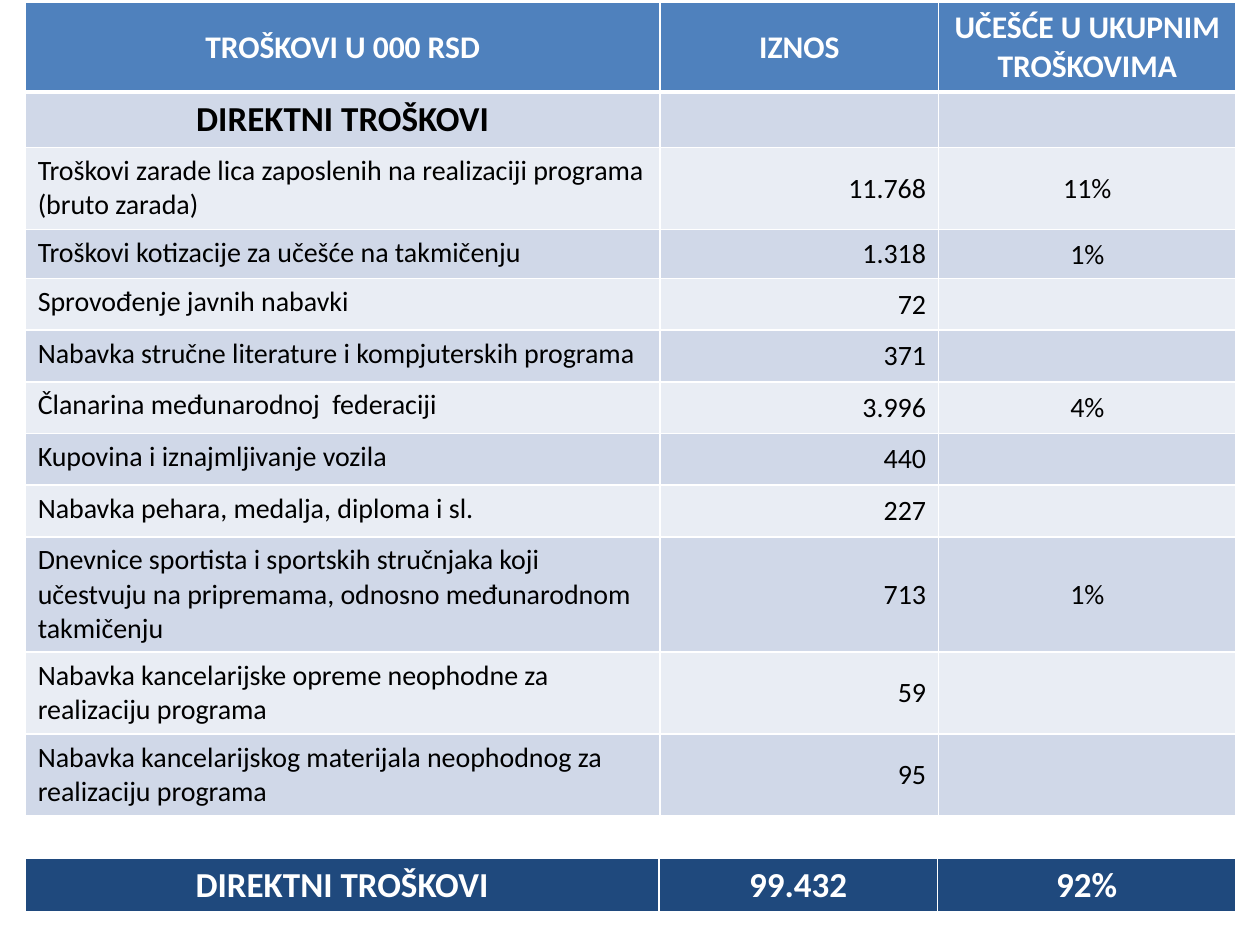
from lxml.etree import SubElement
from pptx import Presentation
from pptx.dml.color import RGBColor
from pptx.enum.text import MSO_ANCHOR, PP_ALIGN
from pptx.oxml.ns import qn
from pptx.util import Inches, Pt

COLORS = {
    "white": "FFFFFF",
    "black": "000000",
    "header": "4F81BD",
    "odd": "D0D8E8",
    "even": "E9EDF4",
    "total": "1F497D",
}
FONT = "Calibri"
HEADINGS = ["TROŠKOVI U 000 RSD", "IZNOS", "UČEŠĆE U UKUPNIM TROŠKOVIMA"]
SECTION = "DIREKTNI TROŠKOVI"
COSTS = [
    ("Troškovi zarade lica zaposlenih na realizaciji programa (bruto zarada)", "11.768", "11%", 0.65),
    ("Troškovi kotizacije za učešće na takmičenju", "1.318", "1%", 0.39),
    ("Sprovođenje javnih nabavki", "72", "", 0.41),
    ("Nabavka stručne literature i kompjuterskih programa", "371", "", 0.41),
    ("Članarina međunarodnoj  federaciji", "3.996", "4%", 0.41),
    ("Kupovina i iznajmljivanje vozila", "440", "", 0.41),
    ("Nabavka pehara, medalja, diploma i sl.", "227", "", 0.41),
    ("Dnevnice sportista i sportskih stručnjaka koji učestvuju na pripremama, "
     "odnosno međunarodnom takmičenju", "713", "1%", 0.91),
    ("Nabavka kancelarijske opreme neophodne za realizaciju programa", "59", "", 0.65),
    ("Nabavka kancelarijskog materijala neophodnog za realizaciju programa", "95", "", 0.65),
]


def set_borders(cell, top=1, bottom=1):
    """Draw white lines around a cell, with widths in points."""
    properties = cell._tc.get_or_add_tcPr()
    widths = {"a:lnL": 1, "a:lnR": 1, "a:lnT": top, "a:lnB": bottom}
    for index, (tag, width) in enumerate(widths.items()):
        line = SubElement(properties, qn(tag), w=str(Pt(width)))
        fill = SubElement(line, qn("a:solidFill"))
        SubElement(fill, qn("a:srgbClr"), val=COLORS["white"])
        properties.insert(index, line)


def write_text(cell, text, size=16, color="black", bold=False,
               align=PP_ALIGN.LEFT, anchor=MSO_ANCHOR.MIDDLE):
    """Write formatted text into a cell."""
    cell.vertical_anchor = anchor
    paragraph = cell.text_frame.paragraphs[0]
    paragraph.alignment = align
    run = paragraph.add_run()
    run.text = text
    run.font.name = FONT
    run.font.size = Pt(size)
    run.font.bold = bold
    run.font.color.rgb = RGBColor.from_string(COLORS[color])


def fill_cell(cell, color):
    """Give a cell a solid fill."""
    cell.fill.solid()
    cell.fill.fore_color.rgb = RGBColor.from_string(COLORS[color])


def add_grid(slide, left, top, widths, heights):
    """Add a table with the given column widths and row heights in inches."""
    frame = slide.shapes.add_table(
        len(heights), len(widths), Inches(left), Inches(top),
        Inches(sum(widths)), Inches(sum(heights)))
    table = frame.table
    for column, width in zip(table.columns, widths):
        column.width = Inches(width)
    for row, height in zip(table.rows, heights):
        row.height = Inches(height)
    return table


def add_cost_table(slide, left, top, widths):
    """Place the table of direct costs."""
    heights = [0.7, 0.41] + [cost[-1] for cost in COSTS]
    table = add_grid(slide, left, top, widths, heights)
    for row_index, row in enumerate(table.rows):
        color = "header" if row_index == 0 else "odd" if row_index % 2 else "even"
        for cell in row.cells:
            fill_cell(cell, color)
            set_borders(cell, top=3 if row_index == 1 else 1,
                        bottom=3 if row_index == 0 else 1)
    for cell, heading in zip(table.rows[0].cells, HEADINGS):
        write_text(cell, heading, size=18, color="white", bold=True, align=PP_ALIGN.CENTER)
    write_text(table.cell(1, 0), SECTION, size=20, bold=True,
               align=PP_ALIGN.CENTER, anchor=MSO_ANCHOR.TOP)
    for row_index, (name, amount, share, height) in enumerate(COSTS, start=2):
        name_cell, amount_cell, share_cell = table.rows[row_index].cells
        write_text(name_cell, name,
                   anchor=MSO_ANCHOR.MIDDLE if height > 0.9 else MSO_ANCHOR.TOP)
        write_text(amount_cell, amount, align=PP_ALIGN.RIGHT)
        if share:
            write_text(share_cell, share, align=PP_ALIGN.CENTER)
            share_cell.margin_left = share_cell.margin_right = Inches(0.01)
            share_cell.margin_top = Inches(0.01)
            share_cell.margin_bottom = Inches(0)


def add_total_table(slide, left, top, widths):
    """Place the one-row table with the total of direct costs."""
    table = add_grid(slide, left, top, widths, [0.43])
    table.first_row = False
    for cell, text in zip(table.rows[0].cells, [SECTION, "99.432", "92%"]):
        fill_cell(cell, "total")
        set_borders(cell, bottom=3)
        write_text(cell, text, size=20, color="white", bold=True,
                   align=PP_ALIGN.CENTER, anchor=MSO_ANCHOR.TOP)


def main():
    """Build and save the presentation."""
    presentation = Presentation()
    presentation.slide_width = Inches(10)
    presentation.slide_height = Inches(7.5)
    slide = presentation.slides.add_slide(presentation.slide_layouts[6])
    add_cost_table(slide, 0.2, 0.02, [5.04, 2.21, 2.36])
    add_total_table(slide, 0.2, 6.81, [5.03, 2.21, 2.37])
    presentation.save("out.pptx")


if __name__ == "__main__":
    main()
